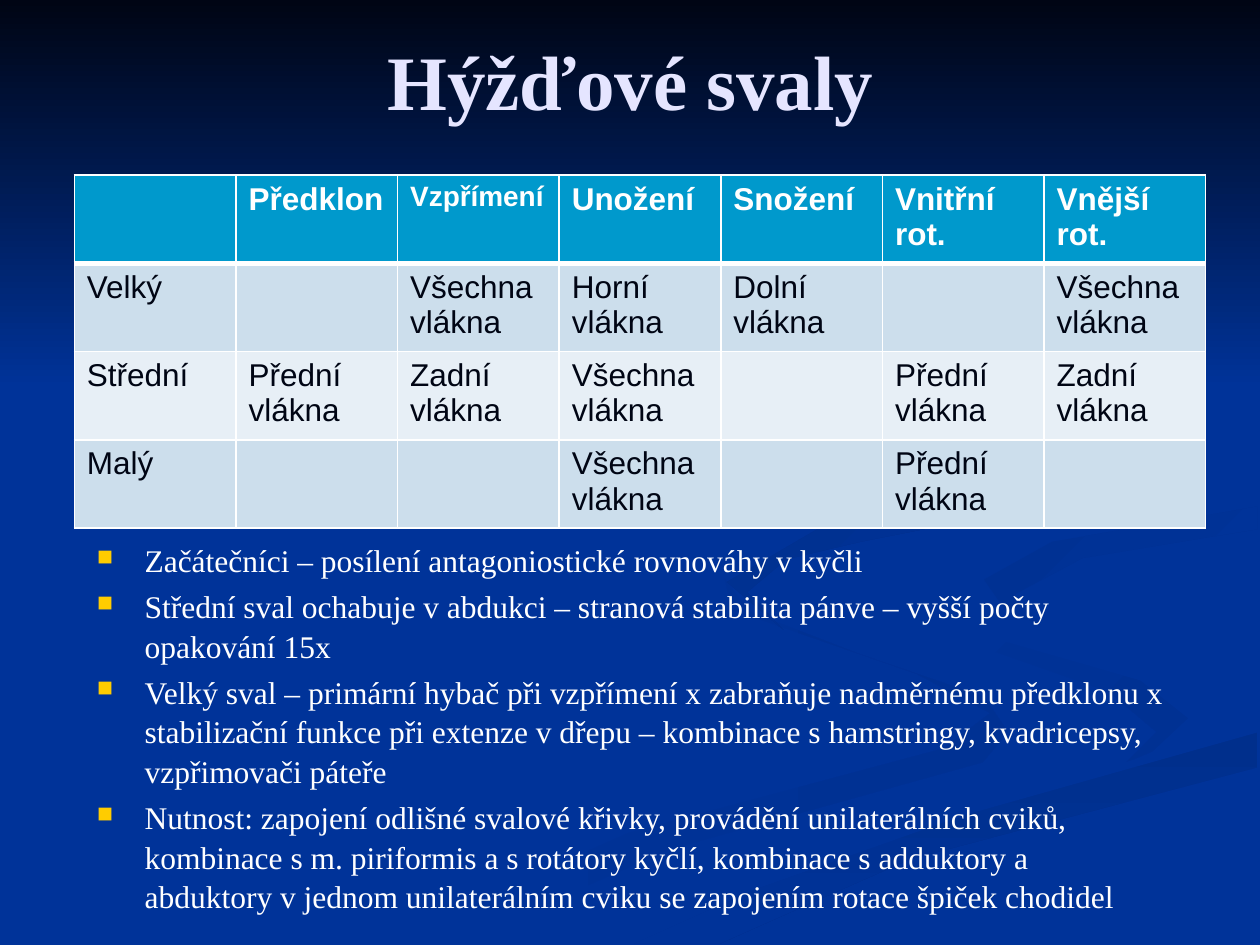
"""Build a slide on the gluteal muscles: a movement table above training notes."""
from typing import NamedTuple, Optional

from lxml import etree
from pptx import Presentation
from pptx.dml.color import RGBColor
from pptx.enum.text import MSO_ANCHOR, PP_ALIGN
from pptx.oxml.ns import qn
from pptx.util import Emu, Pt

GRID_COLUMNS, GRID_ROWS, UNIT = 1000, 750, 9144
CENTER, MIDDLE = PP_ALIGN.CENTER, MSO_ANCHOR.MIDDLE
BLUE = RGBColor(0x00, 0x33, 0x99)
NIGHT = RGBColor(0x00, 0x05, 0x14)
DUSK = RGBColor(0x00, 0x31, 0x93)
SHADE = RGBColor(0x00, 0x2F, 0x8C)
LAVENDER = RGBColor(0xE5, 0xE5, 0xFF)
WHITE = RGBColor(0xFF, 0xFF, 0xFF)
GOLD = RGBColor(0xFF, 0xCC, 0x00)
HEADER = RGBColor(0x00, 0x99, 0xCC)
BANDS = (RGBColor(0xCC, 0xDE, 0xEC), RGBColor(0xE7, 0xEF, 0xF6))
SERIF, SANS = "Times New Roman", "Arial"


class Frame(NamedTuple):
    """A rectangle in grid columns and rows."""
    left: float
    top: float
    width: float
    height: float

    def emu(self) -> list[Emu]:
        """Convert the grid lengths."""
        return [Emu(round(length * UNIT)) for length in self]


class Ribbon(NamedTuple):
    """A background outline with a plain or gradient fill."""
    points: tuple[tuple[int, int], ...]
    start: RGBColor
    end: Optional[RGBColor] = None
    angle: int = 0


TITLE_FRAME = Frame(67, 28, 867, 71)
NOTES_FRAME = Frame(67, 423, 867, 450)
TABLE_FRAME = Frame(59, 139, 898, 280)

RIBBONS = (
    Ribbon((
        (781, 553), (682, 519), (594, 485), (575, 459), (581, 484), (728, 535),
        (786, 566), (749, 594), (499, 661), (300, 749), (361, 749), (532, 674),
        (780, 605), (800, 581)), BLUE, DUSK),
    Ribbon((
        (943, 570), (905, 540), (758, 498), (724, 464), (755, 505), (880, 549),
        (918, 581), (894, 605), (932, 589)), BLUE, DUSK, 45),
    Ribbon((
        (503, 749), (571, 749), (722, 682), (998, 609), (998, 581), (764, 647),
        (599, 706)), SHADE, BLUE, 90),
    Ribbon((
        (725, 464), (759, 498), (905, 540), (943, 570), (911, 600), (663, 668),
        (477, 749), (503, 749), (599, 706), (765, 647), (999, 581), (999, 538),
        (832, 498), (781, 463), (822, 434), (999, 402), (999, 387), (770, 427)),
        BLUE),
    Ribbon((
        (781, 460), (797, 483), (826, 496), (805, 472), (859, 443), (998, 420),
        (998, 402), (835, 430)), DUSK, BLUE, 45),
    Ribbon((
        (683, 430), (825, 402), (889, 362), (890, 324), (843, 275), (762, 233),
        (846, 279), (889, 335), (861, 370), (649, 420), (577, 462), (622, 500),
        (593, 470), (624, 444)), SHADE, BLUE, 45),
    Ribbon(((0, 0), (0, 308), (1000, 308), (1000, 0)), NIGHT, BLUE, 90),
)

ALL, FRONT, BACK = "Všechna vlákna", "Přední vlákna", "Zadní vlákna"
ROWS = (
    ("", "Předklon", "Vzpřímení", "Unožení", "Snožení", "Vnitřní rot.", "Vnější rot."),
    ("Velký", "", ALL, "Horní vlákna", "Dolní vlákna", "", ALL),
    ("Střední", FRONT, BACK, ALL, "", FRONT, BACK),
    ("Malý", "", "", ALL, "", FRONT, ""),
)
NOTES = (
    "Začátečníci – posílení antagoniostické rovnováhy v kyčli",
    "Střední sval ochabuje v abdukci – stranová stabilita pánve – vyšší počty opakování 15x",
    "Velký sval – primární hybač při vzpřímení x zabraňuje nadměrnému předklonu x "
    "stabilizační funkce při extenze v dřepu – kombinace s hamstringy, kvadricepsy, "
    "vzpřimovači páteře",
    "Nutnost: zapojení odlišné svalové křivky, provádění unilaterálních cviků, "
    "kombinace s m. piriformis a s rotátory kyčlí, kombinace s adduktory a abduktory "
    "v jednom unilaterálním cviku se zapojením rotace špiček chodidel",
)


def style(para, size: float, name: str, color: RGBColor, bold: bool = False) -> None:
    """Set the font of a whole paragraph."""
    font = para.font
    font.size, font.name, font.bold = Pt(size), name, bold
    font.color.rgb = color


def draw_ribbon(page, ribbon: Ribbon) -> None:
    """Draw one background outline."""
    builder = page.shapes.build_freeform(*ribbon.points[0], scale=UNIT)
    builder.add_line_segments(ribbon.points[1:], close=True)
    shape = builder.convert_to_shape()
    shape.shadow.inherit = False
    shape.line.fill.background()
    if ribbon.end is None:
        shape.fill.solid()
        shape.fill.fore_color.rgb = ribbon.start
        return
    shape.fill.gradient()
    shape.fill.gradient_angle = -ribbon.angle % 360
    for stop, color in zip(shape.fill.gradient_stops, (ribbon.start, ribbon.end)):
        stop.color.rgb = color


def add_bullet(para) -> None:
    """Give a paragraph a hanging gold square."""
    properties = para._p.get_or_add_pPr()
    properties.set("marL", str(38 * UNIT))
    properties.set("indent", str(-38 * UNIT))
    color = etree.SubElement(properties, qn("a:buClr"))
    etree.SubElement(color, qn("a:srgbClr"), val=str(GOLD))
    etree.SubElement(properties, qn("a:buSzPct"), val="70000")
    etree.SubElement(properties, qn("a:buChar"), char="■")


def add_borders(cell, bottom: float) -> None:
    """Put white borders before the fill of a cell."""
    properties = cell._tc.get_or_add_tcPr()
    widths = {"a:lnL": 1, "a:lnR": 1, "a:lnT": 1, "a:lnB": bottom}
    for position, (tag, width) in enumerate(widths.items()):
        line = etree.Element(qn(tag), w=str(Pt(width)))
        fill = etree.SubElement(line, qn("a:solidFill"))
        etree.SubElement(fill, qn("a:srgbClr"), val=str(WHITE))
        properties.insert(position, line)


def draw_title(page) -> None:
    """Write the centred heading."""
    frame = page.shapes.add_textbox(*TITLE_FRAME.emu()).text_frame
    frame.word_wrap, frame.vertical_anchor = True, MIDDLE
    para = frame.paragraphs[0]
    para.text, para.alignment = "Hýžďové svaly", CENTER
    style(para, 44, SERIF, LAVENDER, bold=True)


def draw_notes(page) -> None:
    """Write the bulleted notes."""
    frame = page.shapes.add_textbox(*NOTES_FRAME.emu()).text_frame
    frame.word_wrap = True
    for index, note in enumerate(NOTES):
        para = frame.add_paragraph() if index else frame.paragraphs[0]
        para.text = note
        add_bullet(para)
        para.line_spacing = 1.05
        para.space_before = Pt(3.6 if index else 0)
        style(para, 18, SERIF, WHITE)


def draw_table(page) -> None:
    """Draw the table of muscles and movements."""
    table = page.shapes.add_table(len(ROWS), len(ROWS[0]), *TABLE_FRAME.emu()).table
    for row, texts in enumerate(ROWS):
        header = row == 0
        for column, text in enumerate(texts):
            cell = table.cell(row, column)
            cell.fill.solid()
            cell.fill.fore_color.rgb = HEADER if header else BANDS[(row - 1) % 2]
            add_borders(cell, 3 if header else 1)
            cell.text = text
            style(cell.text_frame.paragraphs[0], 16 if text == "Vzpřímení" else 18,
                  SANS, WHITE if header else NIGHT, header)


def main() -> None:
    """Build and save the deck."""
    deck = Presentation()
    deck.slide_width, deck.slide_height = Emu(GRID_COLUMNS * UNIT), Emu(GRID_ROWS * UNIT)
    page = deck.slides.add_slide(deck.slide_layouts[6])
    page.background.fill.solid()
    page.background.fill.fore_color.rgb = BLUE
    for ribbon in RIBBONS:
        draw_ribbon(page, ribbon)
    draw_title(page)
    draw_notes(page)
    draw_table(page)
    deck.save("out.pptx")


if __name__ == "__main__":
    main()
